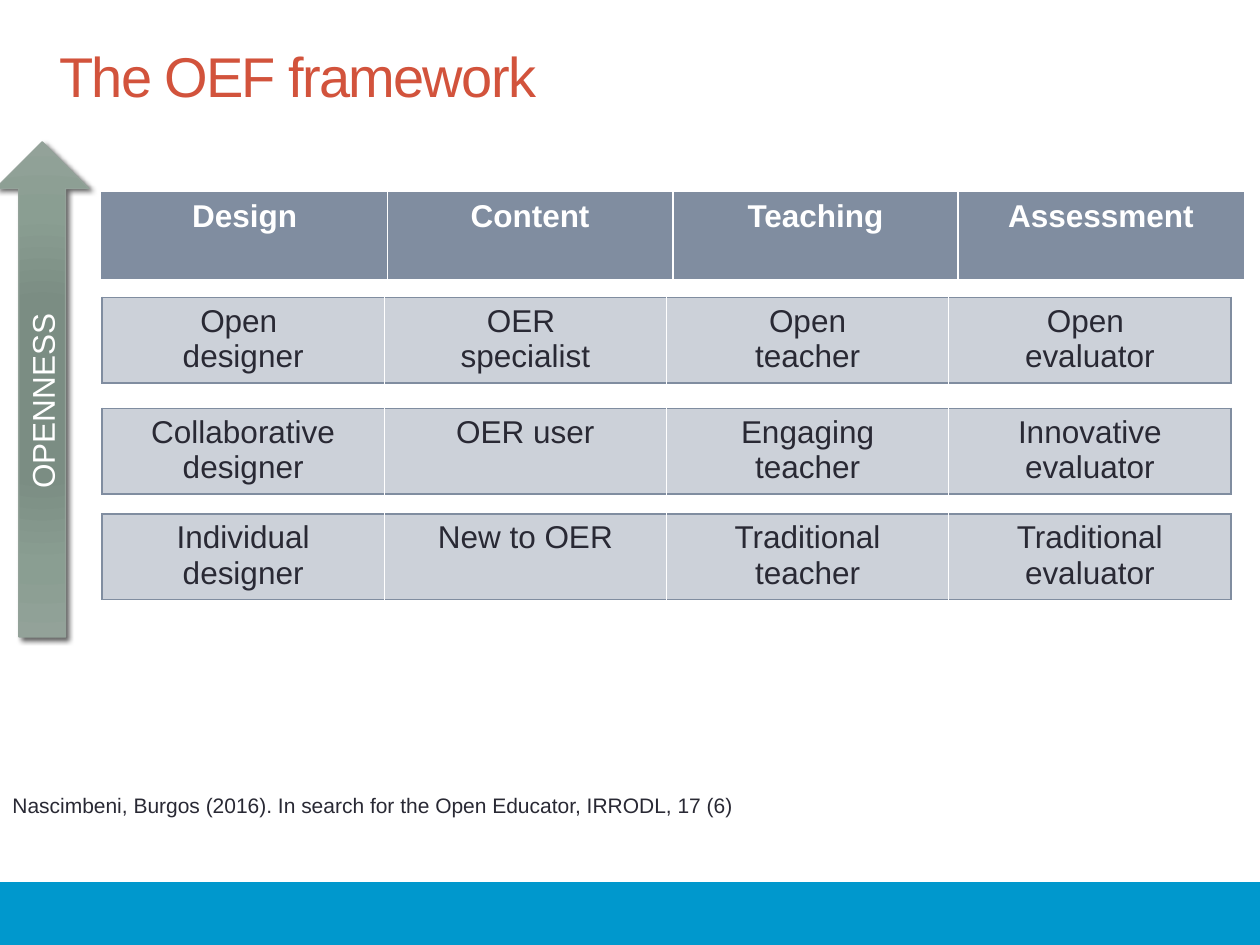
from lxml.etree import SubElement
from pptx import Presentation
from pptx.dml.color import RGBColor
from pptx.enum.shapes import MSO_SHAPE
from pptx.enum.text import MSO_ANCHOR, PP_ALIGN
from pptx.oxml import parse_xml
from pptx.oxml.ns import nsdecls, qn
from pptx.util import Inches, Pt

FONT = "Arial"
COLORS = {
    "title": "D2533C",
    "text": "292934",
    "white": "FFFFFF",
    "bar": "0098CD",
    "header": "808DA0",
    "row": "CCD1D9",
    "arrow": "93A299",
}
ARROW_STOPS = [(0, "7B8E82"), (34, "7B8D83"), (70, "8A9E92"), (100, "93A299")]
HEADERS = ["Design", "Content", "Teaching", "Assessment"]
LEVELS = [
    (2.36, ["Open \ndesigner", "OER \nspecialist", "Open\nteacher", "Open \nevaluator"]),
    (3.24, ["Collaborative designer", "OER user", "Engaging\nteacher", "Innovative evaluator"]),
    (4.08, ["Individual designer", "New to OER", "Traditional\nteacher", "Traditional evaluator"]),
]


def rgb(name):
    return RGBColor.from_string(COLORS[name])


def write(tf, text, size, color, align=PP_ALIGN.LEFT, bold=False):
    tf.word_wrap = True
    tf.text = text
    for p in tf.paragraphs:
        p.alignment = align
        p.font.name = FONT
        p.font.size = Pt(size)
        p.font.bold = bold
        p.font.color.rgb = rgb(color)


def add_title(s, text):
    sp = s.shapes.title
    sp.left, sp.top, sp.width, sp.height = map(Inches, (0.37, 0.06, 9.5, 1.08))
    tf = sp.text_frame
    write(tf, text, 32, "title")
    tf.vertical_anchor = MSO_ANCHOR.MIDDLE
    tf.paragraphs[0].runs[0].font._element.set("spc", "-100")


def add_bar(s):
    sp = s.shapes.add_shape(MSO_SHAPE.RECTANGLE, 0, Inches(7), Inches(10.01), Inches(0.51))
    sp.shadow.inherit = False
    sp.fill.solid()
    sp.fill.fore_color.rgb = rgb("bar")
    sp.line.fill.background()


def set_borders(cell, sides):
    tcPr = cell._tc.get_or_add_tcPr()
    borders = [
        parse_xml(
            f'<a:ln{side} {nsdecls("a")} w="12700"><a:solidFill>'
            f'<a:srgbClr val="{COLORS["header"]}"/></a:solidFill></a:ln{side}>'
        )
        for side in "LRTB" if side in sides
    ]
    for i, border in enumerate(borders):
        tcPr.insert(i, border)


def add_row(s, top, width, texts, fill, color, bold=False):
    last = len(texts) - 1
    frame = s.shapes.add_table(
        1, len(texts), Inches(0.81), Inches(top), Inches(width), Inches(0.68)
    )
    table = frame.table
    table.first_row = False
    table.horz_banding = False
    for i, text in enumerate(texts):
        cell = table.cell(0, i)
        cell.fill.solid()
        cell.fill.fore_color.rgb = rgb(fill)
        write(cell.text_frame, text, 18, color, PP_ALIGN.CENTER, bold)
        set_borders(cell, "TB" + ("L" if i == 0 else "") + ("R" if i == last else ""))


def add_arrow(s, text):
    sp = s.shapes.add_shape(
        MSO_SHAPE.RIGHT_ARROW, Inches(-1.63), Inches(2.72), Inches(3.93), Inches(0.74)
    )
    sp.rotation = 270
    sp.line.color.rgb = rgb("arrow")
    sp.line.width = Pt(0.75)
    sp.shadow.inherit = False
    sp.fill.background()
    spPr = sp._element.spPr
    stops = "".join(
        f'<a:gs pos="{pos * 1000}"><a:srgbClr val="{color}"/></a:gs>'
        for pos, color in ARROW_STOPS
    )
    gradient = parse_xml(
        f'<a:gradFill {nsdecls("a")} rotWithShape="1"><a:gsLst>{stops}</a:gsLst>'
        '<a:path path="circle"><a:fillToRect l="100000" t="100000" r="100000" b="100000"/>'
        "</a:path></a:gradFill>"
    )
    spPr.replace(spPr.find(qn("a:noFill")), gradient)
    shadow = SubElement(
        spPr.find(qn("a:effectLst")), qn("a:outerShdw"),
        blurRad=str(Pt(3)), dist=str(Pt(2)), dir="2700000", rotWithShape="0",
    )
    black = SubElement(shadow, qn("a:srgbClr"), val="000000")
    SubElement(black, qn("a:alpha"), val="60000")
    write(sp.text_frame, text, 18, "white", PP_ALIGN.CENTER)
    sp.text_frame.vertical_anchor = MSO_ANCHOR.MIDDLE


def add_citation(s, text):
    sp = s.shapes.add_textbox(0, Inches(6.24), Inches(6.21), Inches(0.5))
    write(sp.text_frame, text, 12, "text")


def main():
    prs = Presentation()
    prs.slide_width, prs.slide_height = Inches(10), Inches(7.5)
    s = prs.slides.add_slide(prs.slide_layouts[5])
    add_bar(s)
    add_title(s, "The OEF framework")
    add_row(s, 1.53, 9.06, HEADERS, "header", "white", bold=True)
    for top, texts in LEVELS:
        add_row(s, top, 8.96, texts, "row", "text")
    add_arrow(s, "OPENNESS")
    add_citation(s, "Nascimbeni, Burgos (2016). In search for the Open Educator, IRRODL, 17 (6)")
    prs.save("out.pptx")


if __name__ == "__main__":
    main()
